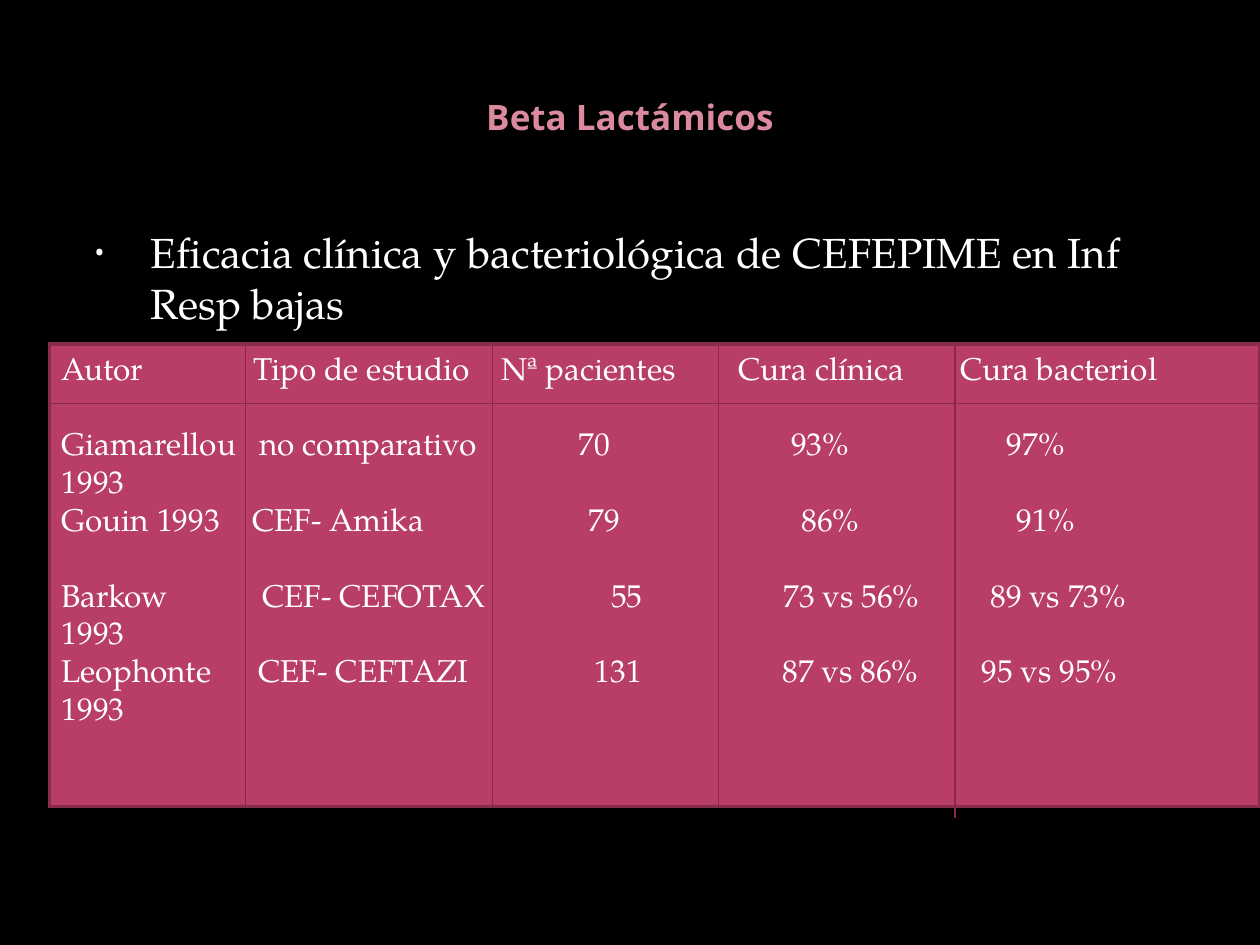
"""Build the slide on the clinical and bacteriological efficacy of cefepime."""
from dataclasses import dataclass
from itertools import pairwise

from lxml import etree
from pptx import Presentation
from pptx.dml.color import RGBColor
from pptx.enum.shapes import MSO_CONNECTOR
from pptx.enum.text import MSO_ANCHOR, PP_ALIGN
from pptx.oxml.ns import qn
from pptx.util import Inches, Pt

STRAIGHT = MSO_CONNECTOR.STRAIGHT
CENTER, LEFT = PP_ALIGN.CENTER, PP_ALIGN.LEFT
TOP, MIDDLE = MSO_ANCHOR.TOP, MSO_ANCHOR.MIDDLE
BLACK = RGBColor(0x00, 0x00, 0x00)
WHITE = RGBColor(0xFF, 0xFF, 0xFF)
BULLET = RGBColor(0xF9, 0xF9, 0xF9)
PINK = RGBColor(0xDB, 0x8A, 0x9E)
CRIMSON = RGBColor(0xB8, 0x3D, 0x68)
FRAME = RGBColor(0x88, 0x2D, 0x4D)
RULE = RGBColor(0x8A, 0x28, 0x4A)
SANS, SERIF = "Noto Sans", "TeX Gyre Pagella"
SLIDE_WIDTH, SLIDE_HEIGHT = 10, 7.5
TABLE_TOP = 2.73
COLUMN_EDGES = (0.39, 1.95, 3.91, 5.7, 7.58, 10)
RULE_TOP, RULE_BOTTOMS = 2.74, (6.41, 6.41, 6.41, 6.49)


@dataclass(frozen=True)
class Row:
    """A table row: height, space above its text, cell texts and text starts in inches."""
    height: float
    padding: float
    texts: tuple[str, ...]
    starts: tuple[float, ...]


ROWS = (
    Row(0.47, 0.06, ("Autor", "Tipo de estudio", "Nª pacientes", "Cura clínica", "Cura bacteriol"),
        (0.49, 2.01, 3.98, 5.86, 7.62)),
    Row(0.79, 0.19, ("Giamarellou\n1993", "no comparativo", "70", "93%", "97%"),
        (0.49, 2.06, 4.59, 6.28, 7.99)),
    Row(0.6, 0, ("Gouin 1993", "CEF- Amika", "79", "86%", "91%"),
        (0.49, 2, 4.67, 6.36, 8.07)),
    Row(0.6, 0, ("Barkow\n1993", "CEF- CEFOTAX", "55", "73 vs 56%", "89 vs 73%"),
        (0.49, 2.08, 4.85, 6.22, 7.86)),
    Row(1.21, 0, ("Leophonte\n1993", "CEF- CEFTAZI", "131", "87 vs 86%", "95 vs 95%"),
        (0.49, 2.05, 4.72, 6.21, 7.79)),
)


def apply_format(target, values: dict) -> None:
    """Set each named attribute on the target."""
    for name, value in values.items():
        setattr(target, name, value)


def format_text(text_frame, size: float, font: str, color: RGBColor,
                bold: bool = False, **paragraph_format) -> None:
    """Give every paragraph one look."""
    for paragraph in text_frame.paragraphs:
        apply_format(paragraph, paragraph_format)
        for run in paragraph.runs:
            apply_format(run.font, {"size": Pt(size), "name": font, "bold": bold})
            run.font.color.rgb = color


def add_bullet(paragraph) -> None:
    """Add a small round bullet with a hanging indent."""
    properties = paragraph._p.get_or_add_pPr()
    properties.set("marL", str(Inches(0.6)))
    properties.set("indent", str(Inches(-0.45)))
    color = etree.SubElement(properties, qn("a:buClr"))
    etree.SubElement(color, qn("a:srgbClr"), val=str(BULLET))
    etree.SubElement(properties, qn("a:buSzPct"), val="65000")
    etree.SubElement(properties, qn("a:buFont"), typeface=SANS)
    etree.SubElement(properties, qn("a:buChar"), char="•")


def add_borders(cell, row: int, column: int) -> None:
    """Draw the sides of a cell that lie on the table's frame and hide the others."""
    sides = {"L": column == 0, "R": column == len(COLUMN_EDGES) - 2,
             "T": row == 0, "B": row == len(ROWS) - 1}
    for side, on_frame in sides.items():
        line = etree.SubElement(cell._tc.get_or_add_tcPr(), qn(f"a:ln{side}"),
                                w=str(Pt(2 if on_frame else 0)))
        fill = etree.SubElement(line, qn("a:solidFill" if on_frame else "a:noFill"))
        if on_frame:
            etree.SubElement(fill, qn("a:srgbClr"), val=str(FRAME))


def add_study_table(slide) -> None:
    """Add the table of studies."""
    width = COLUMN_EDGES[-1] - COLUMN_EDGES[0]
    height = sum(row.height for row in ROWS)
    table = slide.shapes.add_table(
        len(ROWS), len(COLUMN_EDGES) - 1, Inches(COLUMN_EDGES[0]), Inches(TABLE_TOP),
        Inches(width), Inches(height)).table
    apply_format(table, {"first_row": False, "horz_banding": False})
    for column, (left, right) in zip(table.columns, pairwise(COLUMN_EDGES)):
        column.width = Inches(right - left)
    for row_index, row in enumerate(ROWS):
        table.rows[row_index].height = Inches(row.height)
        for column_index, (text, start) in enumerate(zip(row.texts, row.starts)):
            cell = table.cell(row_index, column_index)
            add_borders(cell, row_index, column_index)
            cell.fill.solid()
            cell.fill.fore_color.rgb = CRIMSON
            apply_format(cell, {
                "text": text, "vertical_anchor": TOP,
                "margin_left": Inches(start - COLUMN_EDGES[column_index]),
                "margin_right": 0, "margin_top": Inches(row.padding), "margin_bottom": 0})
            format_text(cell.text_frame, 18, SERIF, WHITE,
                        alignment=LEFT, line_spacing=Pt(21.5))


def add_rule(slide, left: float, top: float, right: float, bottom: float) -> None:
    """Draw one thin rule."""
    connector = slide.shapes.add_connector(
        STRAIGHT, Inches(left), Inches(top), Inches(right), Inches(bottom))
    connector.line.color.rgb = RULE
    connector.line.width = Pt(0.75)
    etree.SubElement(connector._element.spPr, qn("a:effectLst"))


def add_rules(slide) -> None:
    """Rule between the columns and below the header."""
    for edge, bottom in zip(COLUMN_EDGES[1:-1], RULE_BOTTOMS):
        add_rule(slide, edge, RULE_TOP, edge, bottom)
    header_bottom = TABLE_TOP + ROWS[0].height
    add_rule(slide, COLUMN_EDGES[0], header_bottom, COLUMN_EDGES[-1], header_bottom)


def add_heading(slide) -> None:
    """Place the title and the bulleted subject."""
    margin, width = Inches(SLIDE_WIDTH * 0.05), Inches(SLIDE_WIDTH * 0.9)
    title = slide.shapes.title
    apply_format(title, {"left": margin, "top": Inches(SLIDE_HEIGHT * 0.04),
                         "width": width, "height": Inches(1.25)})
    apply_format(title.text_frame, {"text": "Beta Lactámicos", "vertical_anchor": MIDDLE})
    format_text(title.text_frame, 20, SANS, PINK, bold=True, alignment=CENTER)
    subject = slide.shapes.add_textbox(margin, Inches(1.75), width, Inches(5.15)).text_frame
    apply_format(subject, {
        "word_wrap": True, "vertical_anchor": TOP,
        "text": "Eficacia clínica y bacteriológica de CEFEPIME en Inf Resp bajas"})
    format_text(subject, 24, SERIF, WHITE, alignment=LEFT, space_before=Pt(4.8))
    add_bullet(subject.paragraphs[0])


def main() -> None:
    """Build and save the presentation."""
    presentation = Presentation()
    apply_format(presentation, {"slide_width": Inches(SLIDE_WIDTH),
                                "slide_height": Inches(SLIDE_HEIGHT)})
    slide = presentation.slides.add_slide(presentation.slide_layouts[5])
    slide.background.fill.solid()
    slide.background.fill.fore_color.rgb = BLACK
    add_heading(slide)
    add_study_table(slide)
    add_rules(slide)
    presentation.save("out.pptx")


if __name__ == "__main__":
    main()
